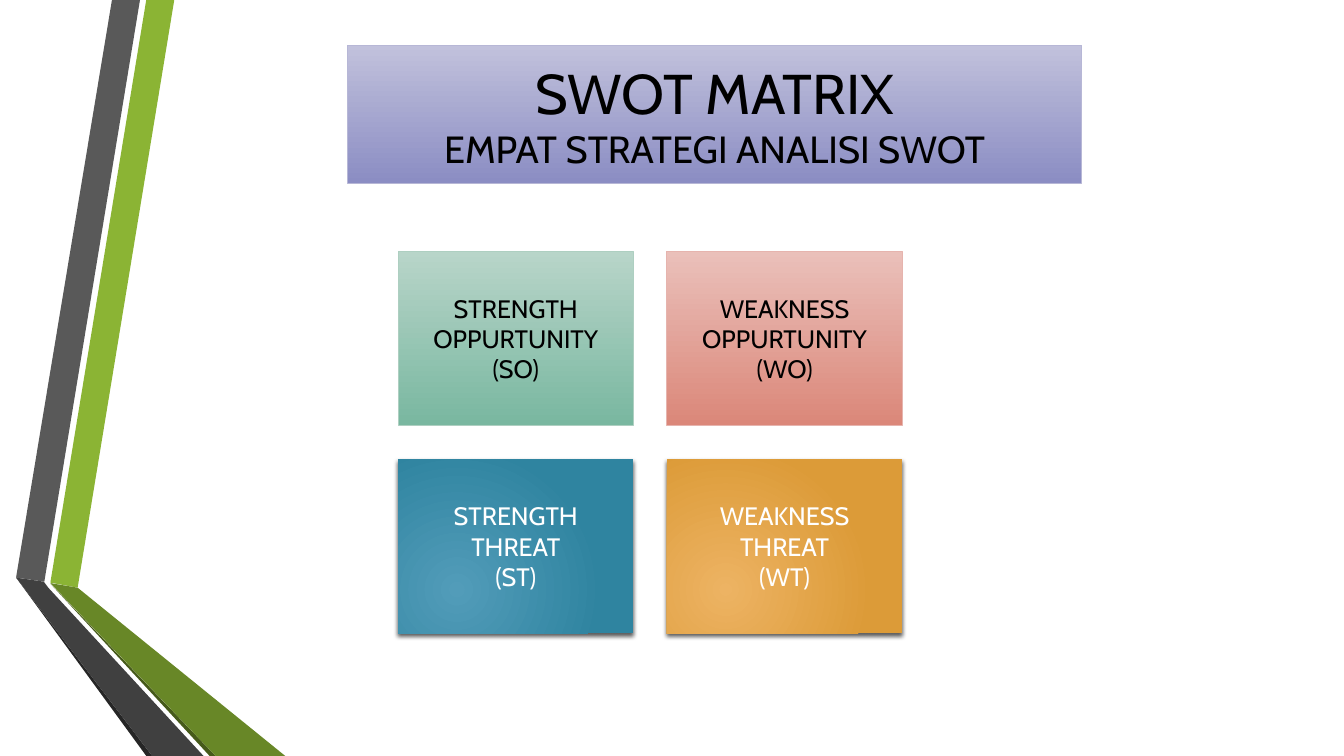
from copy import deepcopy
from lxml import etree
from pptx import Presentation
from pptx.dml.color import RGBColor
from pptx.enum.shapes import MSO_SHAPE
from pptx.enum.text import MSO_ANCHOR, MSO_AUTO_SIZE, PP_ALIGN
from pptx.oxml import parse_xml
from pptx.oxml.ns import nsdecls, qn
from pptx.util import Pt

FONT = "Cabin"
BLACK, WHITE = "000000", "FFFFFF"

# Ribbon pieces: colour and outline in points, back to front
RIBBONS = [
    ("8BB434", [(36, 416.2), (55.5, 419.8), (124.5, 0), (104.5, 0)]),
    ("595959", [(100, 0), (80, 0), (11.5, 412.6), (31.7, 415.5)]),
    ("262626", [(11.5, 412.6), (104.5, 540), (108.7, 540)]),
    ("465A1A", [(36, 416.9), (149.8, 540), (154.1, 540)]),
    ("688727", [(36, 416.5), (154.1, 540), (203.8, 540), (55.5, 419.8)]),
    ("404040", [(145.4, 540), (34.5, 419.8), (31.3, 415.5),
                (11.5, 412.6), (108.7, 540)]),
]

# Strategy rows: text colour, flat or raised style, then the cards
STRATEGIES = [
    (BLACK, False, [
        (["STRENGTH", "OPPURTUNITY", "(SO)"], ("B8D5C9", "79B7A0"), "AECFC1"),
        (["WEAKNESS", "OPPURTUNITY", "(WO)"], ("EAC0BA", "DB8779"), "E6B4AE"),
    ]),
    (WHITE, True, [
        (["STRENGTH", "THREAT", "(ST)"], ("529CB9", "2F84A0"), None),
        (["WEAKNESS", "THREAT", "(WT)"], ("EDB363", "DC9B38"), None),
    ]),
]


def rgb(value):
    return RGBColor.from_string(value)


def fill_gradient(sp, colors):
    sp.fill.gradient()
    sp.fill.gradient_angle = 270
    for stop, position, color in zip(sp.fill.gradient_stops, (0, 1), colors):
        stop.position = position
        stop.color.rgb = rgb(color)


def set_outline(sp, color):
    if color:
        sp.line.color.rgb = rgb(color)
        sp.line.width = Pt(0.75)
    else:
        sp.line.fill.background()


def make_raised(sp):
    """Turn the gradient circular and drop a soft shadow below the shape."""
    grad = sp._element.spPr.find(qn("a:gradFill"))
    lin = grad.find(qn("a:lin"))
    grad.replace(lin, parse_xml(
        f'<a:path {nsdecls("a")} path="circle">'
        '<a:fillToRect l="50000" t="100000" r="100000" b="50000"/></a:path>'))
    effects = sp._element.spPr.find(qn("a:effectLst"))
    shadow = etree.SubElement(effects, qn("a:outerShdw"), blurRad=str(Pt(3)),
                              dist=str(Pt(2)), dir="5400000", rotWithShape="0")
    color = etree.SubElement(shadow, qn("a:srgbClr"), val=BLACK)
    etree.SubElement(color, qn("a:alpha"), val="64000")


def add_text(p, text, size, color):
    p.alignment = PP_ALIGN.CENTER
    r = p.add_run()
    r.text = text
    r.font.name = FONT
    r.font.size = Pt(size)
    r.font.color.rgb = rgb(color)
    return r


def add_ribbons(slide):
    for color, points in RIBBONS:
        points = [(Pt(x), Pt(y)) for x, y in points]
        builder = slide.shapes.build_freeform(*points[0], scale=1.0)
        builder.add_line_segments(points[1:], close=True)
        sp = builder.convert_to_shape()
        sp.shadow.inherit = False
        sp.fill.solid()
        sp.fill.fore_color.rgb = rgb(color)
        set_outline(sp, None)


def add_title(slide, left, top, width, height):
    sp = slide.shapes.title
    sp.left, sp.top, sp.width, sp.height = map(Pt, (left, top, width, height))
    fill_gradient(sp, ("C1C1DC", "8B8DC3"))
    set_outline(sp, "B7B7D6")
    tf = sp.text_frame
    tf.word_wrap = True
    tf.auto_size = MSO_AUTO_SIZE.NONE
    tf.vertical_anchor = MSO_ANCHOR.MIDDLE
    p = tf.paragraphs[0]
    r = add_text(p, "SWOT MATRIX", 40, BLACK)
    p.add_line_break()
    # The break takes the format of the first line
    p._p.find(qn("a:br")).append(deepcopy(r.font._element))
    add_text(p, "EMPAT STRATEGI ANALISI SWOT", 27, BLACK)


def add_card(slide, box, lines, colors, outline, text_color, raised):
    sp = slide.shapes.add_shape(MSO_SHAPE.RECTANGLE, *map(Pt, box))
    sp.shadow.inherit = False
    fill_gradient(sp, colors)
    set_outline(sp, outline)
    if raised:
        make_raised(sp)
    tf = sp.text_frame
    tf.word_wrap = True
    tf.vertical_anchor = MSO_ANCHOR.MIDDLE
    for i, line in enumerate(lines):
        p = tf.add_paragraph() if i else tf.paragraphs[0]
        add_text(p, line, 18, text_color)


def add_matrix(slide, left, top, width, height, gap=24):
    card_w, card_h = (width - gap) / 2, (height - gap) / 2
    for row, (text_color, raised, cards) in enumerate(STRATEGIES):
        for col, (lines, colors, outline) in enumerate(cards):
            box = (left + col * (card_w + gap), top + row * (card_h + gap),
                   card_w, card_h)
            add_card(slide, box, lines, colors, outline, text_color, raised)


def main():
    prs = Presentation()
    prs.slide_width, prs.slide_height = Pt(960), Pt(540)
    slide = prs.slides.add_slide(prs.slide_layouts[5])
    add_ribbons(slide)
    add_title(slide, 248.2, 32.4, 524.4, 98.6)
    add_matrix(slide, 284.4, 179.6, 360, 272.6)
    prs.save("out.pptx")


if __name__ == "__main__":
    main()
